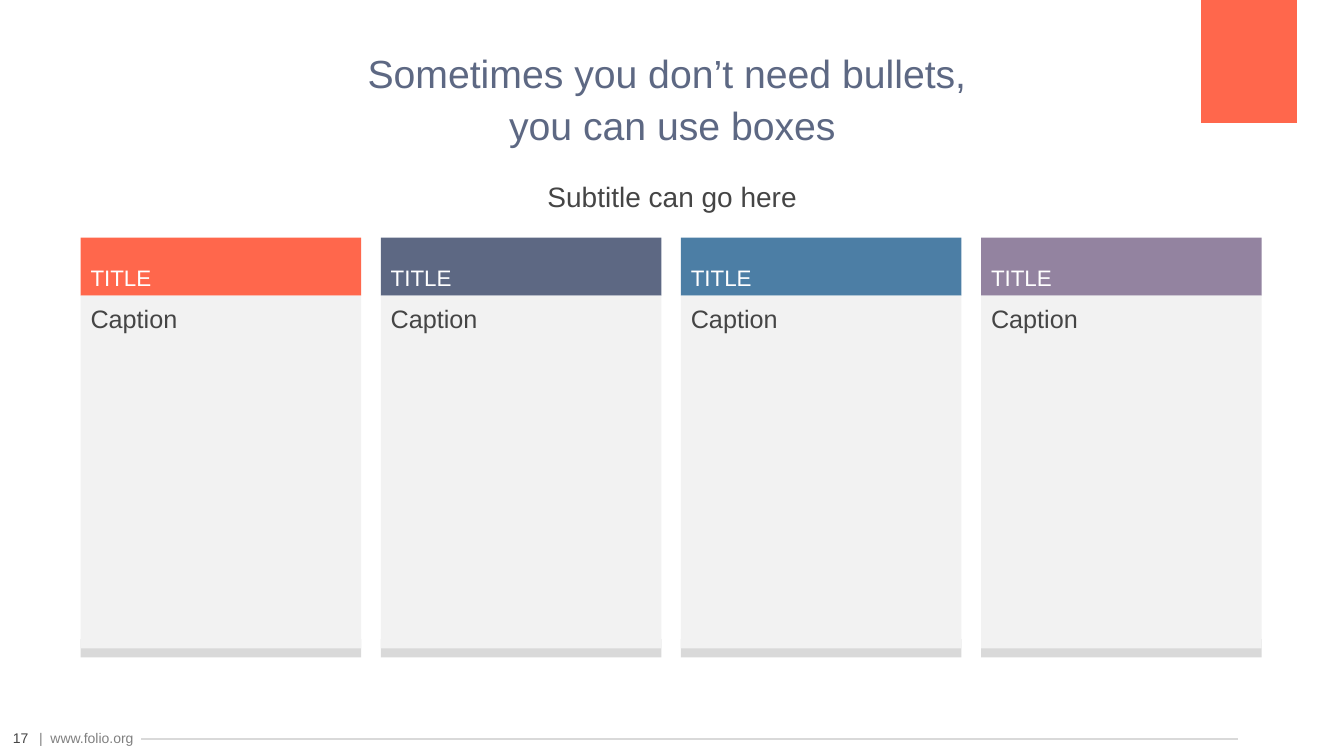
from pptx import Presentation
from pptx.dml.color import RGBColor
from pptx.enum import shapes, text
from pptx.oxml.ns import qn
from pptx.util import Pt
from lxml import etree

HUES = {
    "coral": "FF674C", "slate": "5D6883", "blue": "4C7EA5", "mauve": "9383A0",
    "pale": "F2F2F2", "rule": "D9D9D9", "ink": "454545", "gray": "808080",
    "white": "FFFFFF",
}
HEAD = "Sometimes you don’t need bullets, \vyou can use boxes"
SUB = "Subtitle can go here"
SITE = "|  www.folio.org"
PAGE = "17"
CARDS = [
    ("TITLE", "Caption", "coral"),
    ("TITLE", "Caption", "slate"),
    ("TITLE", "Caption", "blue"),
    ("TITLE", "Caption", "mauve"),
]
LEFT, TOP, WIDE, STEP = 57.6, 169.7, 200.4, 214.4
BAND, BODY = 41.5, 252
FOOT, THIN = 456.5, 13

TOPS, MIDS, ENDS = (text.MSO_ANCHOR.TOP, text.MSO_ANCHOR.MIDDLE,
                    text.MSO_ANCHOR.BOTTOM)
NEAR, MID = text.PP_ALIGN.LEFT, text.PP_ALIGN.CENTER

prs = Presentation()
prs.slide_width, prs.slide_height = Pt(960), Pt(540)
slide = prs.slides.add_slide(prs.slide_layouts[6])


def tint(name):
    return RGBColor.from_string(HUES[name])


def write(box, words, size=10, hue="ink", align=NEAR, anchor=TOPS, line=1.1):
    frame = box.text_frame
    frame.word_wrap = True
    frame.vertical_anchor = anchor
    para = frame.paragraphs[0]
    para.text = words
    para.alignment = align
    para.line_spacing = line
    para.font.name = "Arial"
    para.font.size = Pt(size)
    para.font.color.rgb = tint(hue)


def label(words, x, y, w, h, **style):
    box = slide.shapes.add_textbox(Pt(x), Pt(y), Pt(w), Pt(h))
    write(box, words, **style)


def block(x, y, w, h, hue):
    box = slide.shapes.add_shape(shapes.MSO_SHAPE.RECTANGLE,
                                 Pt(x), Pt(y), Pt(w), Pt(h))
    box.shadow.inherit = False
    box.fill.solid()
    box.fill.fore_color.rgb = tint(hue)
    box.line.fill.background()
    return box


def main():
    label(SITE, 20.9, 517.7, 139.7, 19.4, hue="gray", line=1)
    label(PAGE, -2.9, 517.7, 35.3, 19.4, align=MID, anchor=MIDS, line=1)
    rule = slide.shapes.add_connector(shapes.MSO_CONNECTOR.STRAIGHT,
                                      Pt(100.8), Pt(527.8), Pt(884.2), Pt(527.8))
    rule.line.color.rgb = tint("rule")
    rule.line.width = Pt(1)
    etree.SubElement(rule._element.spPr, qn("a:effectLst"))
    block(858, 0, 68.4, 87.8, "coral")

    label(HEAD, 66.2, 58.3, 828, 51.1, size=28, hue="slate",
          align=MID, anchor=ENDS)
    label(SUB, 66.2, 122.4, 828, 33.8, size=20, align=MID)

    for i, (name, note, hue) in enumerate(CARDS):
        x = LEFT + i * STEP
        block(x, FOOT, WIDE, THIN, "rule")
        write(block(x, TOP, WIDE, BAND, hue), name, size=16, hue="white",
              anchor=ENDS)
        write(block(x, TOP + BAND, WIDE, BODY, "pale"), note, size=18)

    prs.save("out.pptx")


if __name__ == "__main__":
    main()
